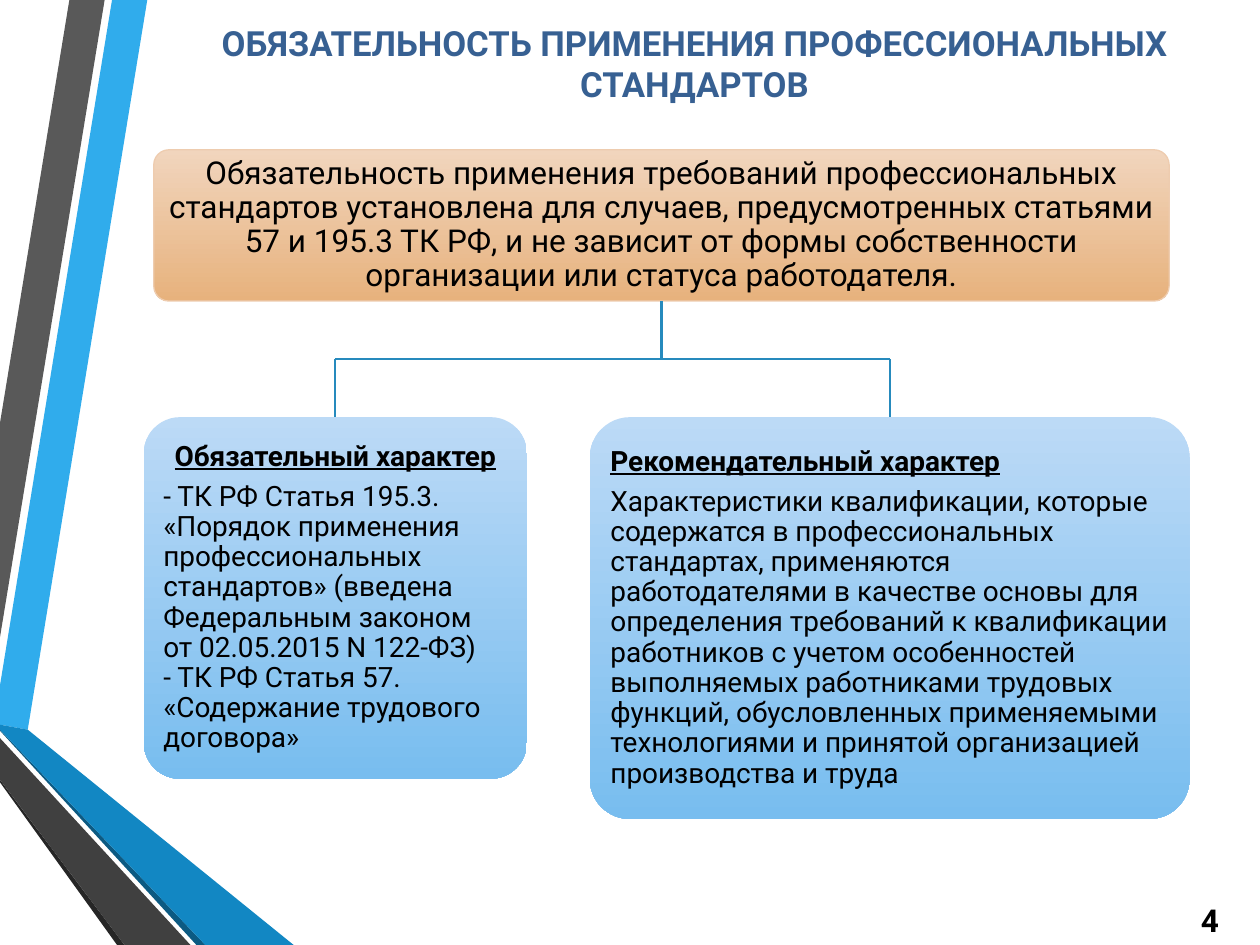
from dataclasses import dataclass

from lxml.etree import SubElement
from pptx import Presentation
from pptx.dml.color import RGBColor
from pptx.enum.shapes import MSO_CONNECTOR, MSO_SHAPE
from pptx.enum.text import MSO_ANCHOR, MSO_AUTO_SIZE, PP_ALIGN
from pptx.oxml.ns import qn
from pptx.util import Cm, Pt


@dataclass(frozen=True)
class Theme:
    font: str = "Roboto"
    title: str = "376092"
    text: str = "000000"
    branch: str = "268ABD"
    rule_border: str = "EECCAF"
    rule_fill: tuple = ("F1D5BD", "E7B27D")
    case_fill: tuple = ("BCDAF6", "78BDEF")
    title_size: float = 19.8
    rule_size: float = 18
    case_size: float = 16
    number_size: float = 18


THEME = Theme()

# Colour and corner points (cm) of each band of the left-hand decoration
RIBBONS = [
    ("30ACEC", [(0, 13.82), (0, 14.61), (0.56, 14.71), (2.97, 0), (2.26, 0)]),
    ("595959", [(2.11, 0), (1.4, 0), (0, 8.53), (0, 12.85)]),
    ("262626", [(0, 15.72), (0, 15.77), (2.36, 19.05), (2.51, 19.05)]),
    ("0C5A82", [(0, 14.71), (0, 14.73), (3.96, 19.05), (4.14, 19.05)]),
    ("1287C3", [(0, 14.71), (4.14, 19.05), (5.92, 19.05), (0.56, 14.71), (0, 14.61)]),
    ("404040", [(0, 15.72), (2.51, 19.05), (3.84, 19.05), (0, 14.88)]),
]

TITLE = "ОБЯЗАТЕЛЬНОСТЬ ПРИМЕНЕНИЯ ПРОФЕССИОНАЛЬНЫХ СТАНДАРТОВ"
RULE = (
    "Обязательность применения требований профессиональных стандартов "
    "установлена для случаев, предусмотренных статьями 57 и 195.3 ТК РФ, "
    "и не зависит от формы собственности организации или статуса работодателя."
)
MANDATORY = [
    "- ТК РФ Статья 195.3. «Порядок применения профессиональных стандартов» "
    "(введена Федеральным законом от 02.05.2015 N 122-ФЗ)",
    "- ТК РФ Статья 57. «Содержание трудового договора»",
]
ADVISORY = [
    "Характеристики квалификации, которые содержатся в профессиональных "
    "стандартах, применяются работодателями в качестве основы для определения "
    "требований к квалификации работников с учетом особенностей выполняемых "
    "работниками трудовых функций, обусловленных применяемыми технологиями "
    "и принятой организацией производства и труда",
]


def rgb(code):
    return RGBColor.from_string(code)


def style(paragraph, size, color=THEME.text, bold=False, align=PP_ALIGN.LEFT):
    paragraph.alignment = align
    font = paragraph.font
    font.name, font.size, font.bold = THEME.font, Pt(size), bold
    font.color.rgb = rgb(color)


def add_ribbon(slide, color, corners):
    start, *rest = [(Cm(x), Cm(y)) for x, y in corners]
    outline = slide.shapes.build_freeform(*start)
    outline.add_line_segments(rest, close=True)
    ribbon = outline.convert_to_shape()
    ribbon.shadow.inherit = False
    ribbon.fill.solid()
    ribbon.fill.fore_color.rgb = rgb(color)
    ribbon.line.fill.background()


def set_title(slide):
    title = slide.shapes.title
    title.left, title.top, title.width, title.height = Cm(2.9), Cm(0.76), Cm(22.2), Cm(1.02)
    frame = title.text_frame
    frame.text = TITLE
    frame.auto_size = MSO_AUTO_SIZE.NONE
    frame.vertical_anchor = MSO_ANCHOR.MIDDLE
    style(frame.paragraphs[0], THEME.title_size, THEME.title, True, PP_ALIGN.CENTER)


def add_card(slide, left, top, width, height, colors, border=None):
    """Rounded box with a top-to-bottom gradient, ready for text."""
    card = slide.shapes.add_shape(
        MSO_SHAPE.ROUNDED_RECTANGLE, Cm(left), Cm(top), Cm(width), Cm(height))
    card.adjustments[0] = 0.1
    card.shadow.inherit = False
    card.fill.gradient()
    card.fill.gradient_angle = 270
    for stop, color in zip(card.fill.gradient_stops, colors):
        stop.color.rgb = rgb(color)
    if border:
        card.line.color.rgb = rgb(border)
        card.line.width = Pt(0.75)
    else:
        card.line.fill.background()
    frame = card.text_frame
    frame.word_wrap = True
    frame.vertical_anchor = MSO_ANCHOR.MIDDLE
    frame.margin_left = frame.margin_right = Cm(0.18)
    frame.margin_top = frame.margin_bottom = Cm(0.18)
    return card


def add_rule(slide):
    card = add_card(slide, 3.1, 3.02, 20.47, 3.05, THEME.rule_fill, THEME.rule_border)
    card.text_frame.text = RULE
    paragraph = card.text_frame.paragraphs[0]
    style(paragraph, THEME.rule_size, align=PP_ALIGN.CENTER)
    paragraph.line_spacing = 0.9
    return card


def add_case(slide, left, width, height, heading, body, heading_align=PP_ALIGN.LEFT):
    card = add_card(slide, left, 8.41, width, height, THEME.case_fill)
    card.text_frame.text = "\n".join([heading, *body])
    first, *rest = card.text_frame.paragraphs
    style(first, THEME.case_size, bold=True, align=heading_align)
    first.font.underline = True
    first.space_after = Pt(0.35 * THEME.case_size)
    for paragraph in rest:
        style(paragraph, THEME.case_size)
    for paragraph in card.text_frame.paragraphs:
        paragraph.line_spacing = 0.9
    return card


def add_branch(slide, x1, y1, x2, y2):
    branch = slide.shapes.add_connector(MSO_CONNECTOR.STRAIGHT, x1, y1, x2, y2)
    branch.line.color.rgb = rgb(THEME.branch)
    branch.line.width = Pt(1.25)
    SubElement(branch._element.spPr, qn("a:effectLst"))
    return branch


def center_x(card):
    return card.left + card.width // 2


def connect_cases(slide, rule, cases):
    """Draw the tree: a trunk from the rule, a crossbar, a drop to each case."""
    rule_bottom = rule.top + rule.height
    bar_y = (rule_bottom + cases[0].top) // 2
    trunk_x = center_x(rule)
    trunk = add_branch(slide, trunk_x, rule_bottom, trunk_x, bar_y)
    trunk.begin_connect(rule, 2)
    add_branch(slide, center_x(cases[0]), bar_y, center_x(cases[-1]), bar_y)
    for case in cases:
        drop = add_branch(slide, center_x(case), bar_y, center_x(case), case.top)
        drop.end_connect(case, 0)


def add_page_number(slide, number):
    frame = slide.shapes.add_textbox(Cm(18.9), Cm(18.03), Cm(5.92), Cm(1.02)).text_frame
    frame.word_wrap = True
    frame.vertical_anchor = MSO_ANCHOR.MIDDLE
    frame.text = number
    style(frame.paragraphs[0], THEME.number_size, bold=True, align=PP_ALIGN.RIGHT)


def main():
    deck = Presentation()
    deck.slide_width, deck.slide_height = Cm(25.4), Cm(19.05)
    slide = deck.slides.add_slide(deck.slide_layouts.get_by_name("Title Only"))
    for color, corners in RIBBONS:
        add_ribbon(slide, color, corners)
    set_title(slide)
    rule = add_rule(slide)
    cases = [
        add_case(slide, 2.9, 7.72, 7.29, "Обязательный характер", MANDATORY, PP_ALIGN.CENTER),
        add_case(slide, 11.89, 12.09, 8.1, "Рекомендательный характер", ADVISORY),
    ]
    connect_cases(slide, rule, cases)
    add_page_number(slide, "4")
    deck.save("out.pptx")


if __name__ == "__main__":
    main()
